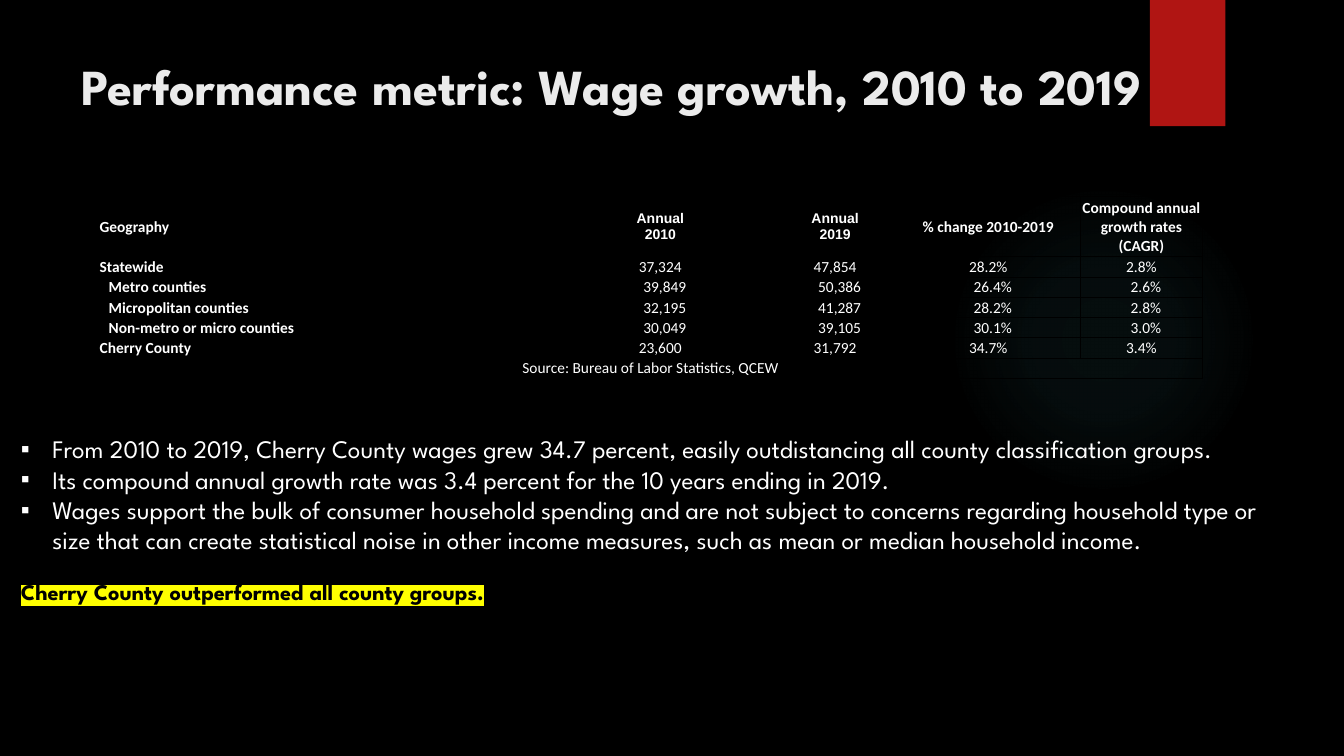
from lxml.etree import SubElement
from pptx import Presentation
from pptx.dml.color import RGBColor
from pptx.enum.shapes import MSO_SHAPE
from pptx.enum.text import MSO_ANCHOR, PP_ALIGN
from pptx.oxml import parse_xml
from pptx.oxml.ns import nsdecls, qn
from pptx.util import Cm, Pt

DISPLAY, BODY = "League Spartan", "Calibri"
WHITE, BLACK = "FFFFFF", "000000"

HEADERS = ["Geography", "Annual\n2010", "Annual\n2019", "% change 2010-2019",
           "Compound annual growth rates (CAGR)"]
WAGES = [
    ["Statewide", "37,324", "47,854", "28.2%", "2.8%"],
    ["Metro counties", "39,849", "50,386", "26.4%", "2.6%"],
    ["Micropolitan counties", "32,195", "41,287", "28.2%", "2.8%"],
    ["Non-metro or micro counties", "30,049", "39,105", "30.1%", "3.0%"],
    ["Cherry County", "23,600", "31,792", "34.7%", "3.4%"],
]
SUBGROUPS = {row[0] for row in WAGES[1:4]}
SOURCE = "Source: Bureau of Labor Statistics, QCEW"
COLUMN_WIDTHS = [11.28, 5.74, 3.07, 4.65, 3.07]

FINDINGS = [
    "From 2010 to 2019, Cherry County wages grew 34.7 percent, easily outdistancing "
    "all county classification groups.",
    "Its compound annual growth rate was 3.4 percent for the 10 years ending in 2019.",
    "Wages support the bulk of consumer household spending and are not subject to "
    "concerns regarding household type or size that can create statistical noise in "
    "other income measures, such as mean or median household income.",
]
CONCLUSION = "Cherry County outperformed all county groups."


def rgb(value):
    return RGBColor.from_string(value)


def add_run(p, text, size, font=DISPLAY, color=WHITE, bold=False):
    r = p.add_run()
    r.text = text
    r.font.size = Pt(size)
    r.font.bold = bold
    r.font.color.rgb = rgb(color)
    r.font.name = font
    return r


def add_textbox(s, left, top, width, height):
    tf = s.shapes.add_textbox(Cm(left), Cm(top), Cm(width), Cm(height)).text_frame
    tf.word_wrap = True
    return tf


def add_plain_shape(s, kind, left, top, width, height):
    sp = s.shapes.add_shape(kind, Cm(left), Cm(top), Cm(width), Cm(height))
    sp.shadow.inherit = False
    sp.line.fill.background()
    return sp


def add_glow(s):
    """Draw the faint teal disc that fades out towards its edge."""
    sp = add_plain_shape(s, MSO_SHAPE.OVAL, 23.9, 4.65, 7.82, 7.82)
    sp.fill.background()
    stops = "".join(
        f'<a:gs pos="{pos * 1000}"><a:srgbClr val="50B9C1">'
        f'<a:alpha val="{alpha * 1000}"/></a:srgbClr></a:gs>'
        for pos, alpha in [(0, 7), (36, 6), (69, 0)])
    gradient = parse_xml(
        f'<a:gradFill {nsdecls("a")} rotWithShape="1"><a:gsLst>{stops}</a:gsLst>'
        '<a:path path="circle"><a:fillToRect l="50000" t="50000" r="50000" b="50000"/>'
        '</a:path></a:gradFill>')
    spPr = sp.element.spPr
    spPr.replace(spPr.find(qn("a:noFill")), gradient)


def add_ribbon(s):
    sp = add_plain_shape(s, MSO_SHAPE.RECTANGLE, 28.98, 0, 1.9, 3.18)
    sp.fill.solid()
    sp.fill.fore_color.rgb = rgb("B01513")


def add_title(s, text):
    tf = add_textbox(s, 1.8, 1.27, 30.81, 2.29)
    add_run(tf.paragraphs[0], text, 36, color="EBEBEB", bold=True)


def format_cell(cell, indent=0.02):
    cell.vertical_anchor = MSO_ANCHOR.MIDDLE
    cell.margin_left = Cm(indent)
    cell.margin_top = cell.margin_right = Cm(0.02)
    cell.margin_bottom = 0
    cell.fill.background()
    tcPr = cell._tc.get_or_add_tcPr()
    for i, side in enumerate("LRTB"):
        tcPr.insert(i, parse_xml(
            f'<a:ln{side} {nsdecls("a")} w="6350"><a:solidFill>'
            f'<a:srgbClr val="{BLACK}"/></a:solidFill></a:ln{side}>'))


def fill_cell(cell, text, centred=True, bold=False):
    p = cell.text_frame.paragraphs[0]
    p.alignment = PP_ALIGN.CENTER if centred else PP_ALIGN.LEFT
    lines = text.split("\n")
    size, font = (10, "Arial") if len(lines) > 1 else (11, BODY)
    for i, line in enumerate(lines):
        if i:
            p.add_line_break()
        add_run(p, line, size, font, bold=bold)


def add_wage_table(s):
    rows = [HEADERS, *WAGES, [SOURCE]]
    frame = s.shapes.add_table(len(rows), len(HEADERS), Cm(2.49), Cm(4.95),
                               Cm(sum(COLUMN_WIDTHS)), Cm(4.58))
    table = frame.table
    table.first_row = table.horz_banding = False
    for column, width in zip(table.columns, COLUMN_WIDTHS):
        column.width = Cm(width)
    for i, row in enumerate(table.rows):
        row.height = Cm(0.51 if i else 1.52)
        for cell in row.cells:
            format_cell(cell, 0.25 if rows[i][0] in SUBGROUPS else 0.02)
    last = len(rows) - 1
    table.cell(last, 0).merge(table.cell(last, len(HEADERS) - 1))
    for i, texts in enumerate(rows):
        for j, text in enumerate(texts):
            is_label = j == 0 and i < last
            fill_cell(table.cell(i, j), text, not is_label, is_label or i == 0)


def set_bullet(p):
    pPr = p._p.get_or_add_pPr()
    pPr.set("marL", str(Cm(0.79)))
    pPr.set("indent", str(-Cm(0.79)))
    SubElement(pPr, qn("a:buFont")).set("typeface", "Arial")
    SubElement(pPr, qn("a:buChar")).set("char", "▪")


def highlight(r, color):
    fill = r.font._element.find(qn("a:solidFill"))
    fill.addnext(parse_xml(
        f'<a:highlight {nsdecls("a")}><a:srgbClr val="{color}"/></a:highlight>'))


def add_findings(s):
    tf = add_textbox(s, 0.28, 10.03, 32.64, 6.93)
    tf.margin_top = Cm(0.9)
    for i, finding in enumerate(FINDINGS):
        p = tf.add_paragraph() if i else tf.paragraphs[0]
        set_bullet(p)
        add_run(p, finding, 18)
    p = tf.add_paragraph()
    p.space_before = Pt(17)
    highlight(add_run(p, CONCLUSION, 16, color=BLACK, bold=True), "FFFF00")


def main():
    prs = Presentation()
    prs.slide_width, prs.slide_height = Cm(33.87), Cm(19.05)
    s = prs.slides.add_slide(prs.slide_layouts[6])
    s.background.fill.solid()
    s.background.fill.fore_color.rgb = rgb(BLACK)
    add_glow(s)
    add_ribbon(s)
    add_title(s, "Performance metric: Wage growth, 2010 to 2019")
    add_wage_table(s)
    add_findings(s)
    prs.save("out.pptx")


if __name__ == "__main__":
    main()
